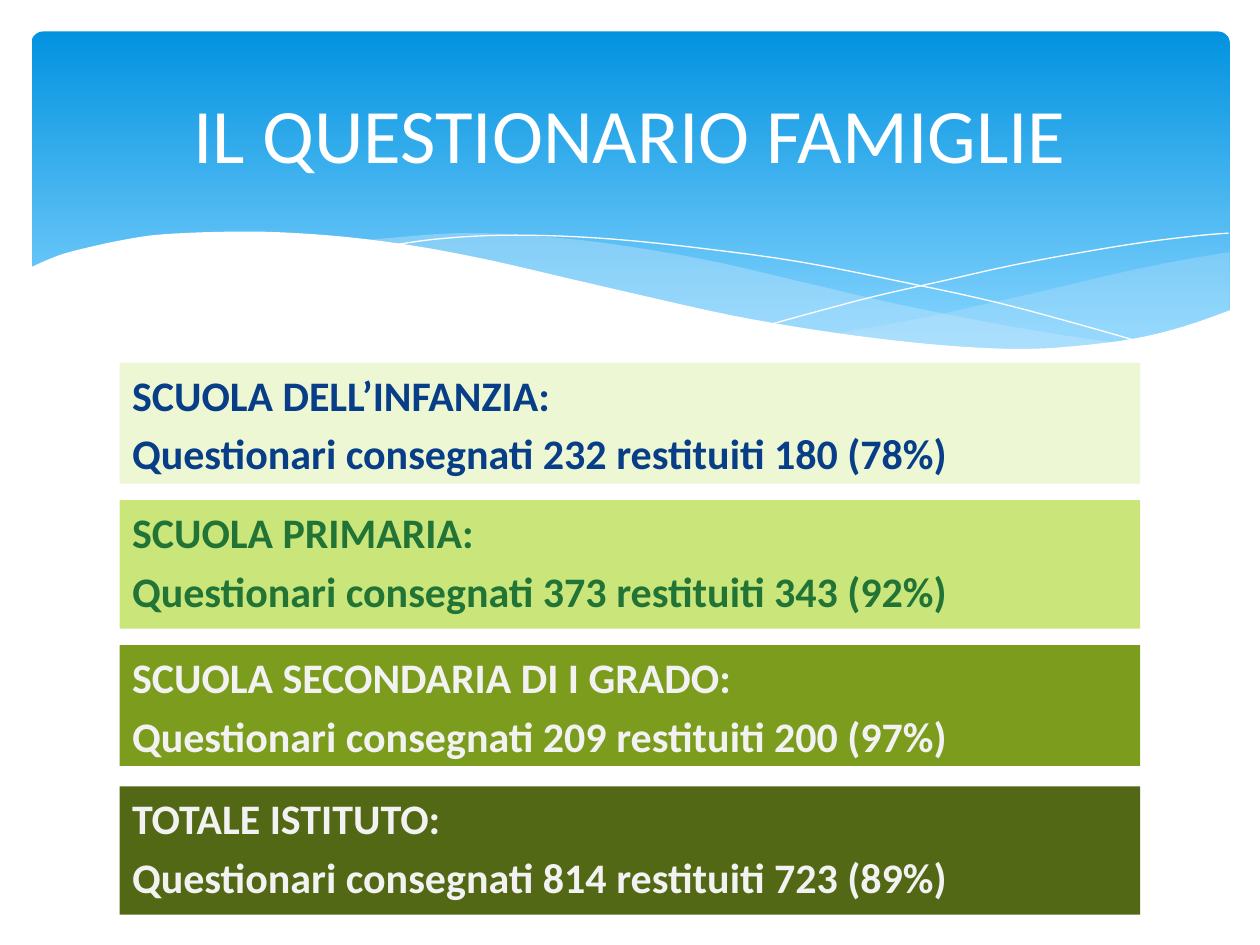
import pptx
import pptx.util
import pptx.dml.color
import pptx.enum.shapes
import pptx.enum.text
import pptx.oxml.ns
from lxml import etree

Inches, Pt = pptx.util.Inches, pptx.util.Pt
RGBColor = pptx.dml.color.RGBColor
SHAPE = pptx.enum.shapes.MSO_SHAPE
ALIGN = pptx.enum.text.PP_ALIGN
ANCHOR = pptx.enum.text.MSO_ANCHOR

FONT = "Calibri"
WHITE = RGBColor(0xFF, 0xFF, 0xFF)
SKY_TOP = RGBColor(0x02, 0x93, 0xE0)
SKY_BOTTOM = RGBColor(0x83, 0xD3, 0xFE)
PALE_BLUE = RGBColor(0xC6, 0xE7, 0xFC)
NAVY = RGBColor(0x07, 0x3E, 0x87)
GREEN = RGBColor(0x21, 0x74, 0x36)
OFF_WHITE = RGBColor(0xF2, 0xF2, 0xF2)
LIME_PALE = RGBColor(0xED, 0xF7, 0xD3)
LIME = RGBColor(0xCA, 0xE6, 0x7B)
OLIVE = RGBColor(0x7C, 0x9C, 0x1E)
OLIVE_DARK = RGBColor(0x52, 0x68, 0x14)

# Edges of the waves, in inches
RIGHT_WAVE_TOP = [(9.76, 2), (9.35, 2.07), (8.91, 2.16), (8.32, 2.3), (7.79, 2.42),
                  (7.29, 2.53), (6.61, 2.65)]
RIGHT_WAVE_BOTTOM = [(6.61, 2.65), (7.05, 2.71), (7.57, 2.76), (8.03, 2.78), (8.54, 2.76),
                     (8.97, 2.7), (9.35, 2.62), (9.76, 2.47)]
MIDDLE_WAVE_TOP = [(8.93, 2.73), (8.37, 2.65), (7.75, 2.54), (7.06, 2.4), (6.29, 2.22),
                   (5.69, 2.08), (5.14, 1.98), (4.65, 1.91), (4.2, 1.87), (3.8, 1.85),
                   (3.44, 1.86), (2.86, 1.91)]
MIDDLE_WAVE_BOTTOM = [(2.86, 1.91), (3.42, 1.99), (4.04, 2.11), (4.49, 2.22), (5.3, 2.4),
                      (6.01, 2.55), (6.65, 2.66), (7.22, 2.74), (7.73, 2.77), (8.18, 2.78),
                      (8.57, 2.77), (8.93, 2.73)]
FALLING_LINE = [(3.09, 1.95), (3.44, 1.9), (3.87, 1.87), (4.33, 1.87), (4.89, 1.9),
                (5.56, 1.97), (6.36, 2.08), (7.27, 2.26), (7.95, 2.41), (8.69, 2.61),
                (9.07, 2.72)]
RISING_LINE = [(6.13, 2.57), (6.53, 2.46), (6.95, 2.35), (7.48, 2.23), (8.06, 2.1),
               (8.66, 1.99), (9.1, 1.92), (9.51, 1.87), (9.75, 1.85)]
WHITE_WAVE_TOP = [(9.77, 2.46), (9.4, 2.59), (8.99, 2.69), (8.5, 2.75), (8.09, 2.77),
                  (7.61, 2.75), (7.08, 2.7), (6.48, 2.62), (5.79, 2.5), (5.03, 2.33),
                  (4.47, 2.2), (3.91, 2.07), (3.4, 1.97), (2.92, 1.9), (2.5, 1.86),
                  (2.11, 1.84), (1.77, 1.84), (1.46, 1.85), (1.19, 1.87), (0.95, 1.91),
                  (0.76, 1.95), (0.52, 2.01), (0.36, 2.07), (0.23, 2.13)]

# top, height, fill, text colour, heading, handed out, returned, percent
BANDS = [
    (2.88, 0.96, LIME_PALE, NAVY, "SCUOLA DELL’INFANZIA:", 232, 180, 78),
    (3.97, 1.02, LIME, GREEN, "SCUOLA PRIMARIA:", 373, 343, 92),
    (5.12, 0.96, OLIVE, OFF_WHITE, "SCUOLA SECONDARIA DI I GRADO:", 209, 200, 97),
    (6.24, 1.02, OLIVE_DARK, OFF_WHITE, "TOTALE ISTITUTO:", 814, 723, 89),
]


def smooth(points, steps=4):
    """Return points along a Catmull-Rom curve through the given points."""
    padded = [points[0], *points, points[-1]]
    curve = []
    for a, b, c, d in zip(padded, padded[1:], padded[2:], padded[3:]):
        for t in (i / steps for i in range(steps)):
            curve.append(tuple(
                0.5 * (2 * q + (r - p) * t + (2 * p - 5 * q + 4 * r - s) * t ** 2
                       + (3 * q - p - 3 * r + s) * t ** 3)
                for p, q, r, s in zip(a, b, c, d)))
    return curve + [points[-1]]


class SlideBuilder:
    def __init__(self, slide):
        self.s = slide

    def set_text(self, sp, text, size, color, bold=False, align=ALIGN.LEFT,
                 anchor=ANCHOR.TOP):
        tf = sp.text_frame
        tf.word_wrap = True
        tf.vertical_anchor = anchor
        tf.text = text
        for i, p in enumerate(tf.paragraphs):
            p.alignment = align
            p.space_before = Pt(size * 0.2 if i else 0)
            for r in p.runs:
                r.font.name, r.font.size = FONT, Pt(size)
                r.font.bold, r.font.color.rgb = bold, color

    def shape(self, kind, x, y, w, h):
        sp = self.s.shapes.add_shape(kind, Inches(x), Inches(y), Inches(w), Inches(h))
        sp.shadow.inherit = False
        sp.line.fill.background()
        return sp

    def sky(self, x, y, w, h):
        sp = self.shape(SHAPE.ROUNDED_RECTANGLE, x, y, w, h)
        sp.adjustments[0] = 0.034
        sp.fill.gradient()
        sp.fill.gradient_angle = 270
        stops = zip(sp.fill.gradient_stops, (0, 0.9), (SKY_TOP, SKY_BOTTOM))
        for stop, position, color in stops:
            stop.position, stop.color.rgb = position, color

    def outline(self, points, close):
        points = [(Inches(x), Inches(y)) for x, y in points]
        fb = self.s.shapes.build_freeform(*points[0])
        fb.add_line_segments(points[1:], close=close)
        sp = fb.convert_to_shape()
        sp.shadow.inherit = False
        return sp

    def wave(self, points, color, opacity=100):
        sp = self.outline(points, close=True)
        sp.line.fill.background()
        sp.fill.solid()
        sp.fill.fore_color.rgb = color
        if opacity < 100:
            qn = pptx.oxml.ns.qn
            clr = sp.element.spPr.find(qn("a:solidFill")).find(qn("a:srgbClr"))
            etree.SubElement(clr, qn("a:alpha"), val=str(opacity * 1000))

    def curve(self, points):
        sp = self.outline(smooth(points), close=False)
        sp.fill.background()
        sp.line.color.rgb = WHITE
        sp.line.width = Pt(0)

    def title(self, text, x, y, w, h):
        sp = self.s.shapes.add_textbox(Inches(x), Inches(y), Inches(w), Inches(h))
        self.set_text(sp, text, 44, WHITE, align=ALIGN.CENTER, anchor=ANCHOR.MIDDLE)

    def band(self, top, height, fill, color, heading, given, returned, percent):
        sp = self.shape(SHAPE.RECTANGLE, 0.95, top, 8.1, height)
        sp.fill.solid()
        sp.fill.fore_color.rgb = fill
        counts = f"Questionari consegnati {given} restituiti {returned} ({percent}%)"
        self.set_text(sp, f"{heading}\n{counts}", 24, color, bold=True)


def main():
    prs = pptx.Presentation()
    prs.slide_width, prs.slide_height = Inches(10), Inches(7.5)
    b = SlideBuilder(prs.slides.add_slide(prs.slide_layouts[6]))

    b.sky(0.25, 0.25, 9.51, 2.7)
    b.wave(smooth(RIGHT_WAVE_TOP) + smooth(RIGHT_WAVE_BOTTOM), PALE_BLUE, 29)
    b.wave(smooth(MIDDLE_WAVE_TOP) + smooth(MIDDLE_WAVE_BOTTOM), PALE_BLUE, 40)
    b.curve(FALLING_LINE)
    b.curve(RISING_LINE)
    b.wave(smooth(WHITE_WAVE_TOP) + [(0.23, 3.29), (9.77, 3.29)], WHITE)

    b.title("IL QUESTIONARIO FAMIGLIE", 0.5, 0.37, 9, 1.37)
    for band in BANDS:
        b.band(*band)
    prs.save("out.pptx")


if __name__ == "__main__":
    main()
